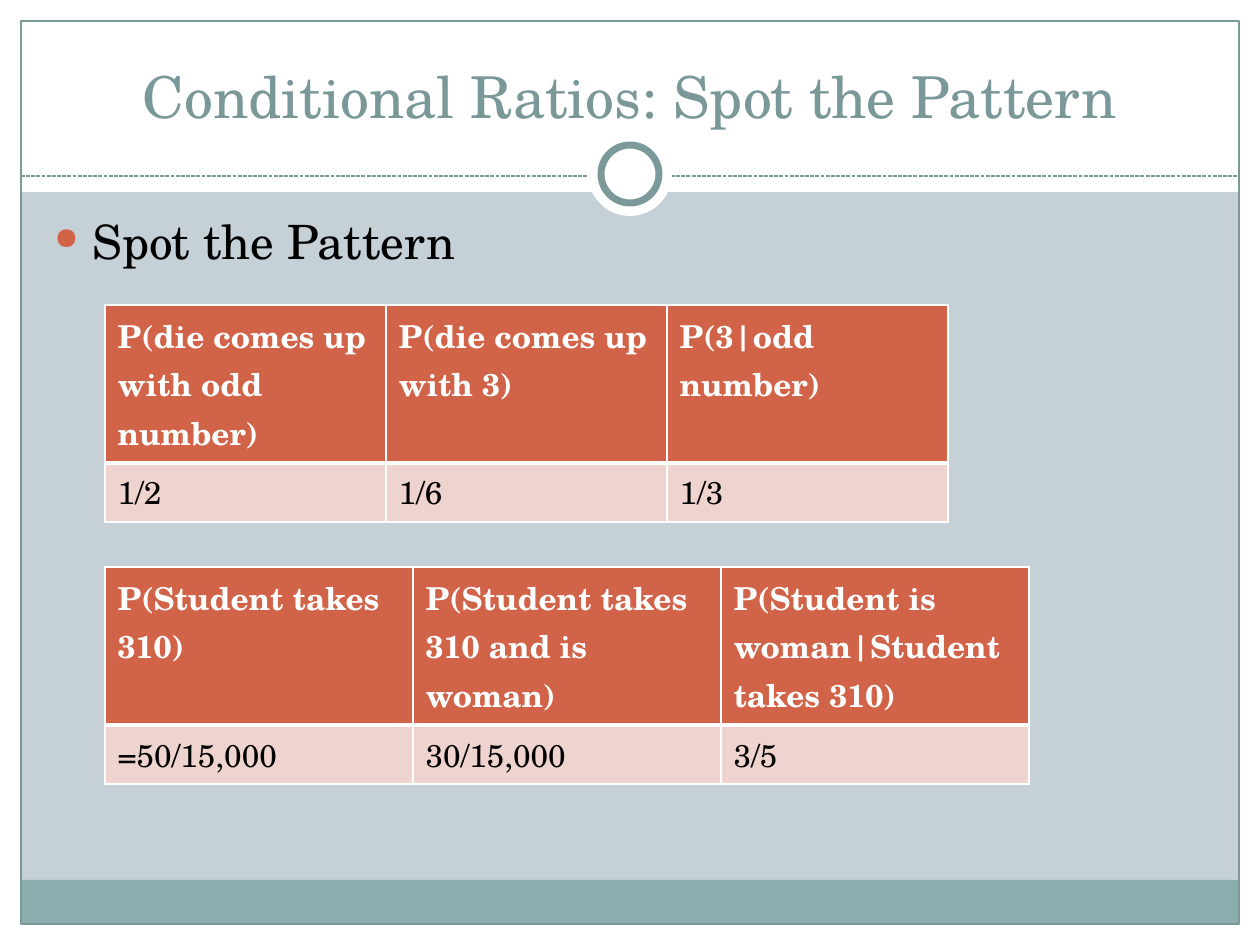
import pptx
import pptx.util
import pptx.dml.color
import pptx.enum.dml
import pptx.enum.shapes
import pptx.enum.text
import pptx.oxml
import pptx.oxml.ns
from lxml import etree

RGB = pptx.dml.color.RGBColor
Pt = pptx.util.Pt
SHAPE = pptx.enum.shapes.MSO_SHAPE
ALIGN = pptx.enum.text.PP_ALIGN
ANCHOR = pptx.enum.text.MSO_ANCHOR
qn = pptx.oxml.ns.qn

WHITE = RGB(0xFF, 0xFF, 0xFF)
BLACK = RGB(0, 0, 0)
MIST = RGB(0xC5, 0xD1, 0xD7)
TEAL = RGB(0x8C, 0xAD, 0xAE)
RULE = RGB(0x7C, 0x99, 0x9A)
TITLE = RGB(0x7B, 0x98, 0x99)
RUST = RGB(0xD1, 0x63, 0x49)
BLUSH = RGB(0xEE, 0xD3, 0xCF)

FONT = "TeX Gyre Schola"
SCALE = 914400 // 126
WIDE, HIGH = 1260, 945
EDGE = 21

DICE = [
    ["P(die comes up with odd number)", "P(die comes up with 3)",
     "P(3|odd number)"],
    ["1/2", "1/6", "1/3"],
]
CLASS = [
    ["P(Student takes 310)", "P(Student takes 310 and is woman)",
     "P(Student is woman|Student takes 310)"],
    ["=50/15,000", "30/15,000", "3/5"],
]


def px(*sizes):
    return [size * SCALE for size in sizes]


def add_form(slide, box, fill=None, line=None, width=0.75, kind=SHAPE.RECTANGLE):
    form = slide.shapes.add_shape(kind, *px(*box))
    form.shadow.inherit = False
    if fill is None:
        form.fill.background()
    else:
        form.fill.solid()
        form.fill.fore_color.rgb = fill
    if line is None:
        form.line.fill.background()
    else:
        form.line.color.rgb = line
        form.line.width = Pt(width)


def add_rule(slide, left, right, top):
    rule = slide.shapes.add_connector(
        pptx.enum.shapes.MSO_CONNECTOR.STRAIGHT, *px(left, top, right, top))
    rule.line.color.rgb = RULE
    rule.line.width = Pt(0.75)
    rule.line.dash_style = pptx.enum.dml.MSO_LINE.SQUARE_DOT
    etree.SubElement(rule._element.spPr, qn("a:effectLst"))


def add_run(para, text, size, color, bold=False):
    run = para.add_run()
    run.text = text
    run.font.name = FONT
    run.font.size = Pt(size)
    run.font.bold = bold
    run.font.color.rgb = color


def add_text(slide, box, text, size, color, anchor=ANCHOR.TOP):
    frame = slide.shapes.add_textbox(*px(*box)).text_frame
    frame.word_wrap = True
    frame.vertical_anchor = anchor
    para = frame.paragraphs[0]
    add_run(para, text, size, color)
    return para


def add_bullet(para, indent):
    props = para._p.get_or_add_pPr()
    props.set("marL", str(indent * SCALE))
    props.set("indent", str(-indent * SCALE))
    color = etree.SubElement(props, qn("a:buClr"))
    etree.SubElement(color, qn("a:srgbClr"), val=str(RUST))
    etree.SubElement(props, qn("a:buSzPct"), val="65000")
    etree.SubElement(props, qn("a:buChar"), char="●")


def set_edges(cell, head):
    """Draw white cell borders, thick between the head and the values."""
    props = cell._tc.get_or_add_tcPr()
    widths = {"L": 1, "R": 1, "T": 1 if head else 3, "B": 3 if head else 1}
    for spot, (side, width) in enumerate(widths.items()):
        edge = etree.Element(qn("a:ln" + side), w=str(Pt(width)))
        fill = etree.SubElement(edge, qn("a:solidFill"))
        etree.SubElement(fill, qn("a:srgbClr"), val=str(WHITE))
        props.insert(spot, edge)


def add_grid(slide, left, top, width, rows):
    """Add a table of equal columns, with its head in the first row."""
    heights = px(158, 59)
    count = len(rows[0])
    grid = slide.shapes.add_table(
        len(rows), count, *px(left, top, width * count), sum(heights)).table
    for col in grid.columns:
        col.width = width * SCALE
    for r, texts in enumerate(rows):
        head = r == 0
        grid.rows[r].height = heights[r]
        for c, text in enumerate(texts):
            cell = grid.cell(r, c)
            cell.fill.solid()
            cell.fill.fore_color.rgb = RUST if head else BLUSH
            set_edges(cell, head)
            add_run(cell.text_frame.paragraphs[0], text, 18,
                    WHITE if head else BLACK, head)


def add_frame(slide):
    """Add the white margins, the foot band, the border and the ring."""
    inner = WIDE - 2 * EDGE
    for box in [(0, HIGH - EDGE, WIDE, EDGE), (0, 0, WIDE, 192),
                (0, 0, EDGE, HIGH), (WIDE - EDGE, 0, EDGE, HIGH)]:
        add_form(slide, box, WHITE)
    add_form(slide, (EDGE, 880, inner, 43), TEAL)
    add_form(slide, (EDGE, EDGE, inner, HIGH - 2 * EDGE), line=RULE)
    add_rule(slide, EDGE, WIDE - EDGE, 176)
    for size, line in [(84, None), (58, RULE)]:
        box = ((WIDE - size) // 2, 174 - size // 2, size, size)
        add_form(slide, box, WHITE, line, 4, SHAPE.OVAL)


def main():
    deck = pptx.Presentation()
    deck.slide_width, deck.slide_height = px(WIDE, HIGH)
    slide = deck.slides.add_slide(deck.slide_layouts[6])
    slide.background.fill.solid()
    slide.background.fill.fore_color.rgb = MIST
    add_frame(slide)

    para = add_text(slide, (42, 31, 1176, 105),
                    "Conditional Ratios: Spot the Pattern", 33, TITLE,
                    ANCHOR.BOTTOM)
    para.alignment = ALIGN.CENTER

    para = add_text(slide, (42, 206, 1172, 95), "Spot the Pattern", 27, BLACK)
    add_bullet(para, 38)

    add_grid(slide, 105, 567, 308, CLASS)
    add_grid(slide, 105, 305, 281, DICE)
    deck.save("out.pptx")


if __name__ == "__main__":
    main()
